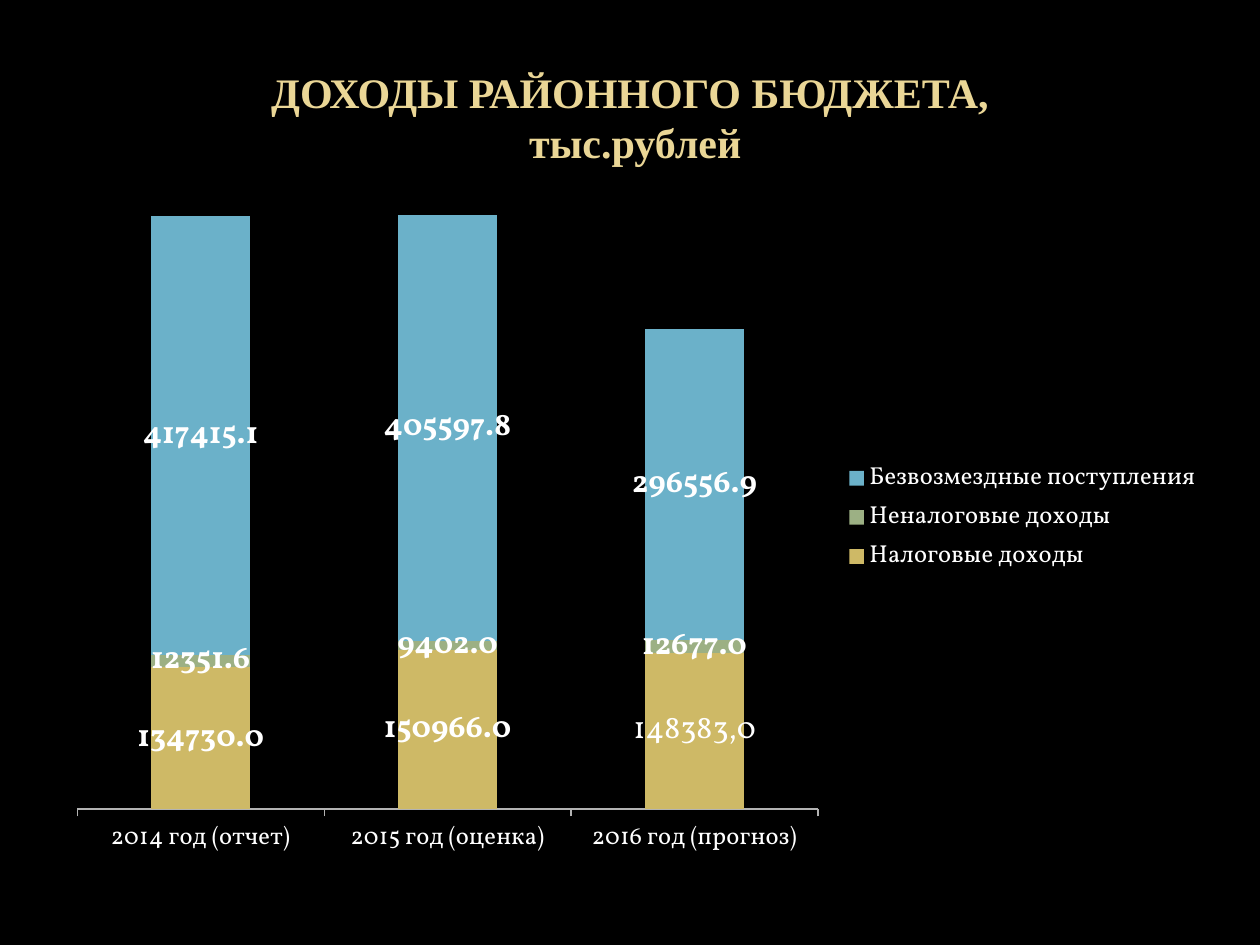
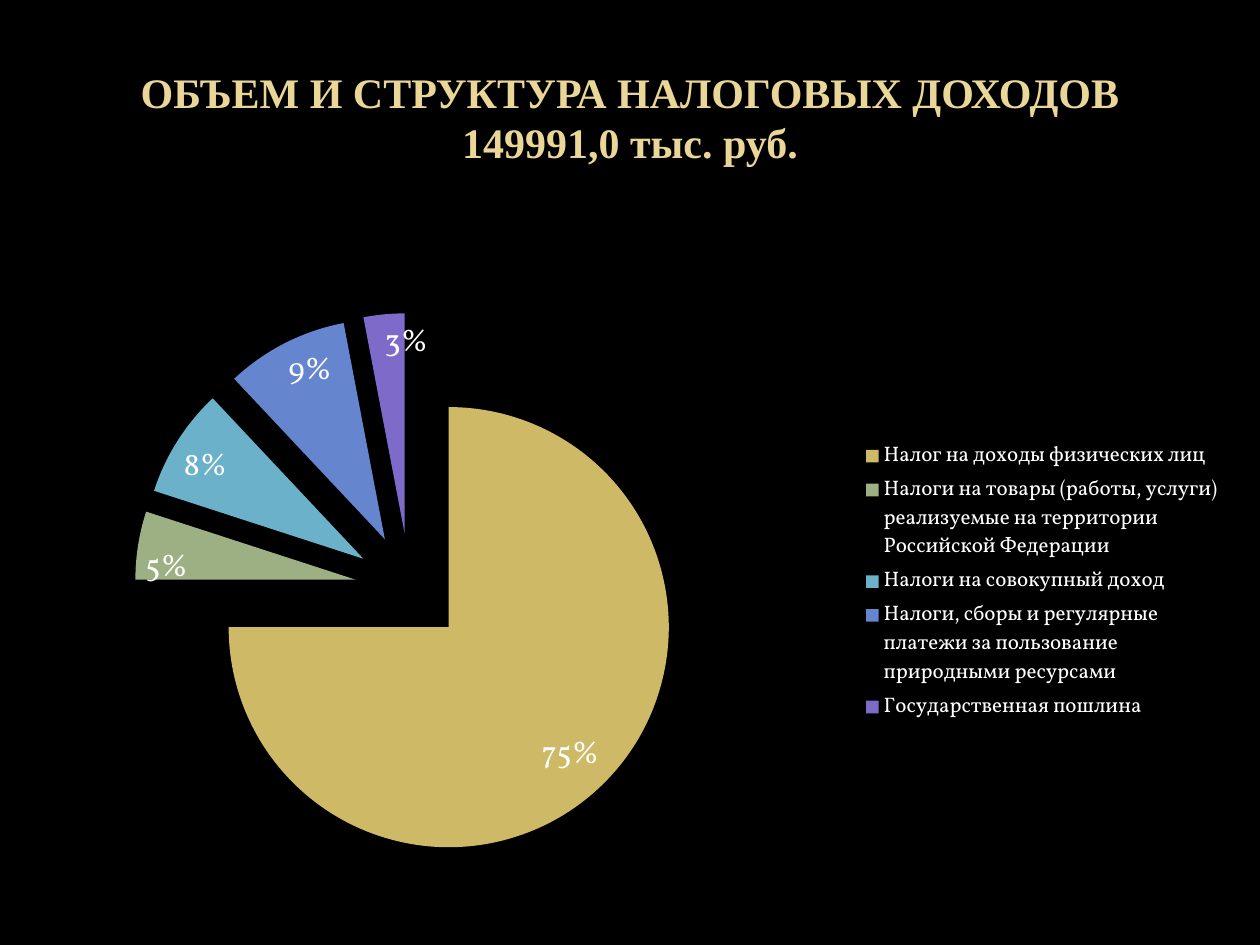
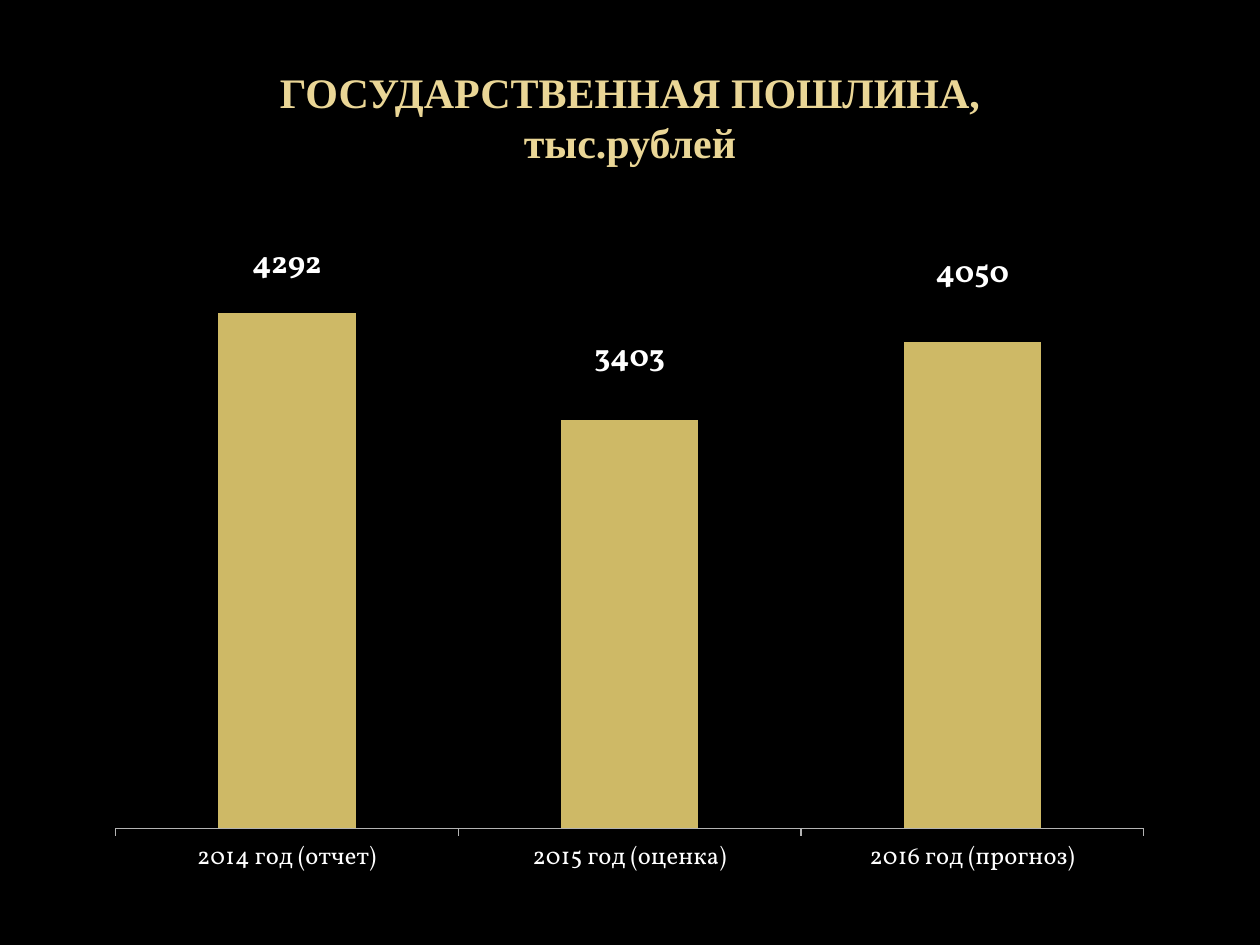
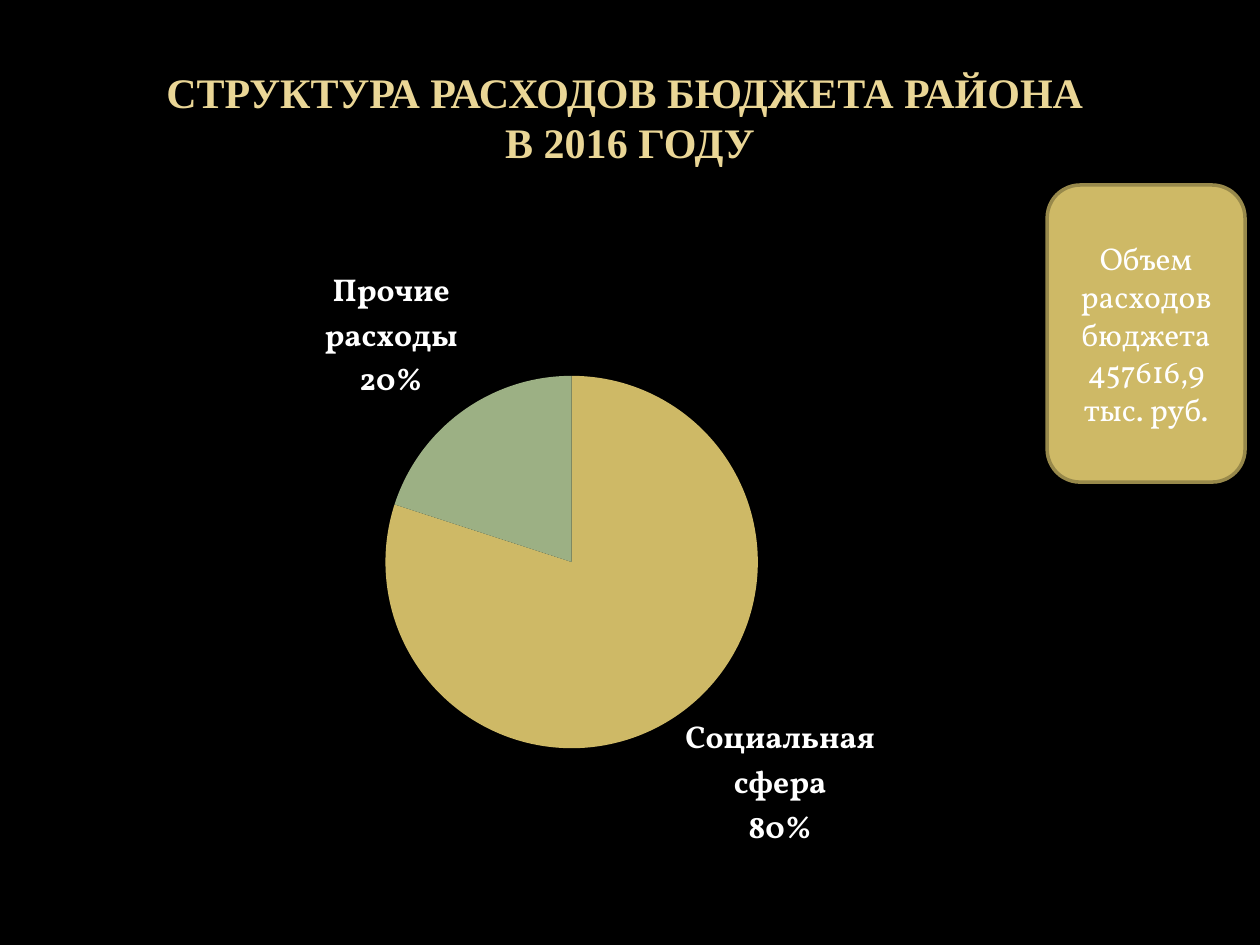
from pptx import Presentation
from pptx.chart.data import CategoryChartData
from pptx.dml.color import RGBColor
from pptx.enum.chart import XL_CHART_TYPE, XL_LABEL_POSITION, XL_LEGEND_POSITION, XL_TICK_MARK
from pptx.enum.shapes import MSO_SHAPE
from pptx.enum.text import MSO_ANCHOR, PP_ALIGN
from pptx.oxml import parse_xml
from pptx.oxml.ns import nsdecls
from pptx.util import Cm, Pt

STACKED, CLUSTERED, PIE = (
    XL_CHART_TYPE.COLUMN_STACKED, XL_CHART_TYPE.COLUMN_CLUSTERED, XL_CHART_TYPE.PIE)
CENTER, INSIDE_END, OUTSIDE_END = (
    XL_LABEL_POSITION.CENTER, XL_LABEL_POSITION.INSIDE_END, XL_LABEL_POSITION.OUTSIDE_END)
LEGEND_RIGHT = XL_LEGEND_POSITION.RIGHT
TICK_OUTSIDE = XL_TICK_MARK.OUTSIDE
ROUNDED = MSO_SHAPE.ROUNDED_RECTANGLE
MIDDLE, CENTERED = MSO_ANCHOR.MIDDLE, PP_ALIGN.CENTER

TITLE_FONT, BODY_FONT = "Times New Roman", "Vollkorn"
BLACK, WHITE, CREAM, GRAY = "000000", "FFFFFF", "EAD696", "B3B3B3"
GOLD, GREEN, CYAN, BLUE, VIOLET = "CEB966", "9CB084", "6BB1C9", "6585CF", "7E6BC9"
DARK_GOLD = "98894B"
PALETTE = [GOLD, GREEN, CYAN, BLUE, VIOLET]

TITLE_BOX = (1.27, 0.76, 22.86, 3.18)
YEARS = ["2014 год (отчет)", "2015 год (оценка)", "2016 год (прогноз)"]


def rgb(value):
    return RGBColor.from_string(value)


def paint(fill, color):
    fill.solid()
    fill.fore_color.rgb = rgb(color)


def style_font(font, size, color=WHITE, bold=False, name=BODY_FONT):
    font.size, font.bold, font.name = Pt(size), bold, name
    font.color.rgb = rgb(color)


def add_titled_slide(prs, heading):
    slide = prs.slides.add_slide(prs.slide_layouts[5])
    title = slide.shapes.title
    title.left, title.top, title.width, title.height = map(Cm, TITLE_BOX)
    frame = title.text_frame
    frame.text = heading
    frame.vertical_anchor = MIDDLE
    paragraph = frame.paragraphs[0]
    paragraph.alignment = CENTERED
    for run in paragraph.runs:
        style_font(run.font, 24, CREAM, True, TITLE_FONT)
    return slide


def add_chart(slide, kind, box, categories, series, number_format="General", legend_size=None):
    """Add a chart; series maps each series name to its values."""
    data = CategoryChartData(number_format=number_format)
    data.categories = categories
    for name, values in series.items():
        data.add_series(name, values)
    chart = slide.shapes.add_chart(kind, *map(Cm, box), data).chart
    style_font(chart.font, 10)
    chart.has_title = False
    chart.has_legend = legend_size is not None
    if chart.has_legend:
        chart.legend.position = LEGEND_RIGHT
        chart.legend.include_in_layout = False
        style_font(chart.legend.font, legend_size)
    return chart


def add_column_chart(slide, kind, box, series, number_format, legend_size=None):
    chart = add_chart(slide, kind, box, YEARS, series, number_format, legend_size)
    plot = chart.plots[0]
    plot.gap_width = 150
    plot.overlap = 100 if kind == STACKED else 0
    plot.vary_by_categories = False
    chart.value_axis.visible = False
    chart.value_axis.has_major_gridlines = False
    years_axis = chart.category_axis
    years_axis.major_tick_mark = TICK_OUTSIDE
    years_axis.format.line.color.rgb = rgb(GRAY)
    style_font(years_axis.tick_labels.font, 14)
    for column, color in zip(plot.series, PALETTE):
        paint(column.format.fill, color)
        labels = column.data_labels
        labels.show_value = True
        labels.position = CENTER if kind == STACKED else OUTSIDE_END
        set_label_format(labels, number_format, True)
    return chart


def add_pie_chart(slide, box, shares, position, bold=False, with_names=False, legend_size=None):
    chart = add_chart(slide, PIE, box, list(shares), {"Series 1": list(shares.values())},
                      legend_size=legend_size)
    plot = chart.plots[0]
    plot.vary_by_categories = True
    pie = plot.series[0]
    for index, color in zip(range(len(shares)), PALETTE):
        paint(pie.points[index].format.fill, color)
    labels = pie.data_labels
    labels.show_value = False
    labels.show_percentage = True
    labels.show_category_name = with_names
    labels.position = position
    set_label_format(labels, "0%", bold)
    if with_names:
        separator = parse_xml(f'<c:separator {nsdecls("c")}>\n</c:separator>')
        chart.element.xpath(".//c:ser/c:dLbls/c:showBubbleSize")[0].addnext(separator)
    return chart


def set_label_format(labels, number_format, bold):
    labels.number_format = number_format
    labels.number_format_is_linked = False
    style_font(labels.font, 18, bold=bold)


def replace_label(series, index, text, position):
    label = series.points[index].data_label
    label.text_frame.text = text
    style_font(label.text_frame.paragraphs[0].runs[0].font, 18)
    label.position = position


def manual_layout(**settings):
    parts = "".join(f'<c:{key} val="{value}"/>' for key, value in settings.items())
    return parse_xml(f'<c:layout {nsdecls("c")}><c:manualLayout>{parts}'
                     '</c:manualLayout></c:layout>')


def place_plot(chart, x, y, w, h):
    plot_area = chart.element.xpath("c:chart/c:plotArea")[0]
    for automatic in plot_area.xpath("c:layout"):
        plot_area.remove(automatic)
    plot_area.insert(0, manual_layout(layoutTarget="inner", xMode="edge", yMode="edge",
                                      x=x, y=y, w=w, h=h))


def raise_labels(chart, rises):
    """Lift each value label above its column by a share of the chart height."""
    points = chart.plots[0].series[0].points
    for index in range(len(rises)):
        label = points[index].data_label
        style_font(label.font, 18, bold=True)
        label.position = OUTSIDE_END
    for label_xml, rise in zip(chart.element.xpath(".//c:dLbl"), rises):
        label_xml[0].addnext(manual_layout(x=0, y=-rise))


def explode(chart, percent):
    first_slice = chart.element.xpath(".//c:ser/c:dPt")[0]
    first_slice.addprevious(parse_xml(f'<c:explosion {nsdecls("c")} val="{percent}"/>'))


def add_callout(slide, box, text):
    callout = slide.shapes.add_shape(ROUNDED, *map(Cm, box))
    callout.shadow.inherit = False
    paint(callout.fill, GOLD)
    callout.line.color.rgb = rgb(DARK_GOLD)
    callout.line.width = Pt(2)
    frame = callout.text_frame
    frame.word_wrap = True
    frame.vertical_anchor = MIDDLE
    frame.text = text
    frame.paragraphs[0].alignment = CENTERED
    style_font(frame.paragraphs[0].runs[0].font, 18)


def add_income_slide(prs):
    slide = add_titled_slide(prs, "ДОХОДЫ РАЙОННОГО БЮДЖЕТА,\v тыс.рублей")
    income = {
        "Налоговые доходы": [134730, 150966, 148383],
        "Неналоговые доходы": [12351.6, 9402, 12677],
        "Безвозмездные поступления": [417415.1, 405597.8, 296556.9],
    }
    chart = add_column_chart(slide, STACKED, (1.09, 3.33, 23.39, 14.2), income, "0.0", 14)
    replace_label(chart.plots[0].series[0], 2, "148383,0", CENTER)


def add_tax_slide(prs):
    slide = add_titled_slide(prs, "ОБЪЕМ И СТРУКТУРА НАЛОГОВЫХ ДОХОДОВ\v149991,0 тыс. руб.")
    taxes = {
        "Налог на доходы физических лиц": 75,
        "Налоги на товары (работы, услуги) реализуемые на территории Российской Федерации": 5,
        "Налоги на совокупный доход": 8,
        "Налоги, сборы и регулярные платежи за пользование природными ресурсами": 9,
        "Государственная пошлина": 3,
    }
    chart = add_pie_chart(slide, (1.3, 4.93, 23.6, 13.59), taxes, INSIDE_END, legend_size=12)
    place_plot(chart, 0.06, 0.1, 0.47, 0.82)
    explode(chart, 25)


def add_duty_slide(prs):
    slide = add_titled_slide(prs, "ГОСУДАРСТВЕННАЯ ПОШЛИНА,\vтыс.рублей")
    chart = add_column_chart(slide, CLUSTERED, (1.9, 4.32, 21.59, 13.59),
                             {"Series 1": [4292, 3403, 4050]}, "General")
    raise_labels(chart, [0.03, 0.05, 0.06])


def add_spending_slide(prs):
    slide = add_titled_slide(prs, "СТРУКТУРА РАСХОДОВ БЮДЖЕТА РАЙОНА \vВ 2016 ГОДУ")
    spending = {"Социальная сфера": 80, "Прочие расходы": 20}
    add_pie_chart(slide, (1.09, 4.93, 22, 12.8), spending, OUTSIDE_END,
                  bold=True, with_names=True)
    add_callout(slide, (21.11, 3.73, 3.99, 5.99), "Объем расходов бюджета 457616,9 тыс. руб.")


def main():
    prs = Presentation()
    prs.slide_width, prs.slide_height = Cm(25.4), Cm(19.05)
    paint(prs.slide_master.background.fill, BLACK)
    add_income_slide(prs)
    add_tax_slide(prs)
    add_duty_slide(prs)
    add_spending_slide(prs)
    prs.save("out.pptx")


if __name__ == "__main__":
    main()
